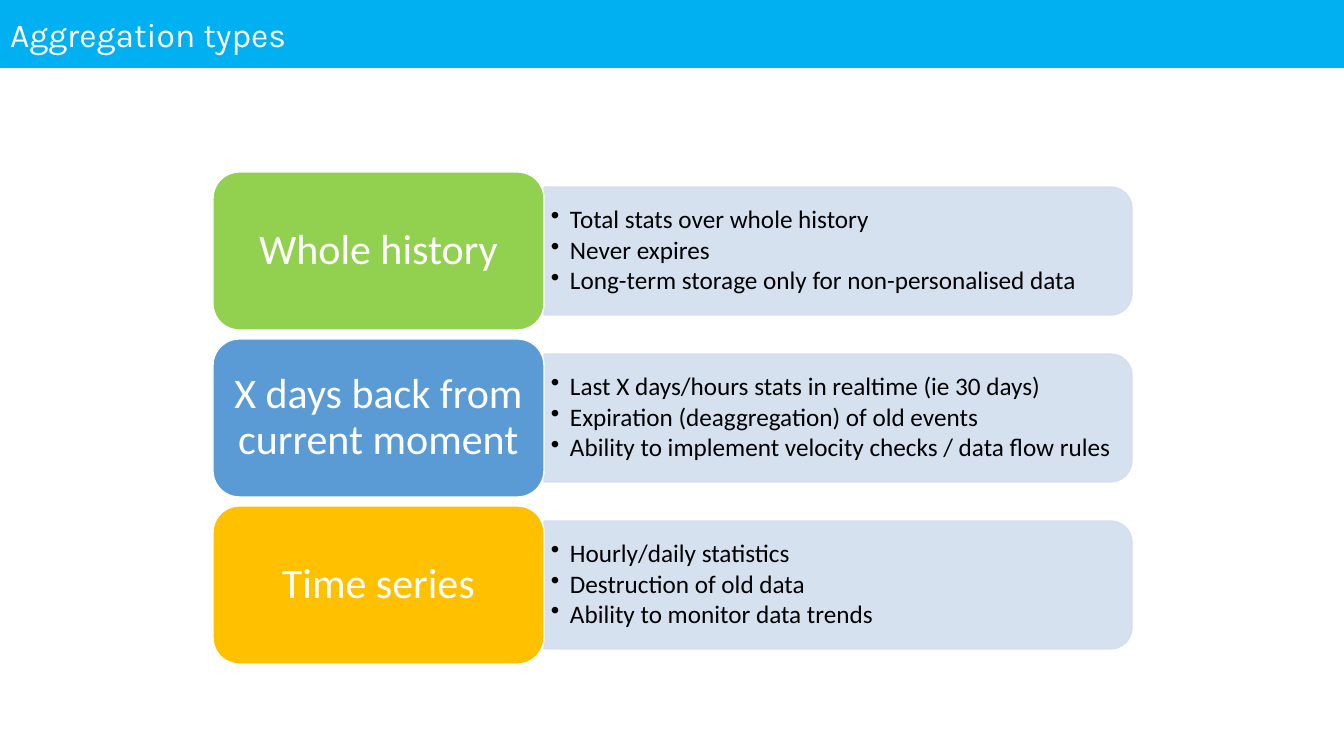
"""Build the slide that compares three aggregation types."""
from lxml.etree import SubElement
from pptx import Presentation
from pptx.dml.color import RGBColor
from pptx.enum.shapes import MSO_SHAPE
from pptx.enum.text import MSO_ANCHOR, PP_ALIGN
from pptx.oxml.ns import qn
from pptx.util import Pt

WHITE = RGBColor(0xFF, 0xFF, 0xFF)
BLACK = RGBColor(0x00, 0x00, 0x00)
CYAN = RGBColor(0x00, 0xB0, 0xF0)
GREEN = RGBColor(0x92, 0xD0, 0x50)
BLUE = RGBColor(0x5B, 0x9B, 0xD5)
AMBER = RGBColor(0xFF, 0xC0, 0x00)
PALE_BLUE = RGBColor(0xD2, 0xDE, 0xEF)

TITLE = "Aggregation types"
AGGREGATIONS = [
    ("Whole history", GREEN, [
        "Total stats over whole history",
        "Never expires",
        "Long-term storage only for non-personalised data",
    ]),
    ("X days back from current moment", BLUE, [
        "Last X days/hours stats in realtime (ie 30 days)",
        "Expiration (deaggregation) of old events",
        "Ability to implement velocity checks / data flow rules",
    ]),
    ("Time series", AMBER, [
        "Hourly/daily statistics",
        "Destruction of old data",
        "Ability to monitor data trends",
    ]),
]

PAGE_WIDTH, PAGE_HEIGHT, TITLE_HEIGHT = 1344, 756, 68
ROW_TOP, ROW_PITCH = 172, 167
CARD_LEFT, CARD_WIDTH, CARD_HEIGHT = 213, 331, 158
PANEL_WIDTH, PANEL_HEIGHT = 588, 128
LIST_WIDTH, LIST_HEIGHT = 582, 115
BULLET_INDENT = 19


def px(length):
    """Turn pixels into EMU."""
    return round(length * 914400 / 100.8)


def add_block(page, preset, left, top, width, height, fill, line=None):
    """Add a filled preset shape without a shadow."""
    block = page.shapes.add_shape(preset, px(left), px(top), px(width), px(height))
    block.shadow.inherit = False
    block.fill.solid()
    block.fill.fore_color.rgb = fill
    if line is None:
        block.line.fill.background()
    else:
        block.line.color.rgb = line
        block.line.width = Pt(1)
    return block


def write(box, lines, font, size, colour, align, margins):
    """Write vertically centred lines and return their paragraphs."""
    frame = box.text_frame
    frame.text = "\n".join(lines)
    frame.word_wrap = True
    frame.vertical_anchor = MSO_ANCHOR.MIDDLE
    frame.margin_left = frame.margin_right = px(margins[0])
    frame.margin_top = frame.margin_bottom = px(margins[1])
    for para in frame.paragraphs:
        para.alignment = align
        for span in para.runs:
            span.font.name = font
            span.font.size = Pt(size)
            span.font.color.rgb = colour
    return frame.paragraphs


def add_bullet(para):
    """Give a paragraph a hanging round bullet."""
    properties = para._p.get_or_add_pPr()
    properties.set("marL", str(px(BULLET_INDENT)))
    properties.set("indent", str(-px(BULLET_INDENT)))
    SubElement(properties, qn("a:buChar"), char="•")


def make_translucent(shape):
    """Set fill and line to 90 percent opacity."""
    for colour in shape._element.spPr.iter(qn("a:srgbClr")):
        SubElement(colour, qn("a:alpha"), val="90000")


def add_aggregation(page, top, name, colour, details):
    """Add one row: a detail panel and its coloured name card."""
    middle = top + CARD_HEIGHT / 2
    panel_left = CARD_LEFT + CARD_WIDTH
    panel = add_block(page, MSO_SHAPE.ROUND_2_SAME_RECTANGLE,
                      panel_left + (PANEL_WIDTH - PANEL_HEIGHT) / 2,
                      middle - PANEL_WIDTH / 2,
                      PANEL_HEIGHT, PANEL_WIDTH, PALE_BLUE, PALE_BLUE)
    panel.rotation = 90
    make_translucent(panel)

    detail_box = page.shapes.add_textbox(
        px(panel_left), px(middle - LIST_HEIGHT / 2), px(LIST_WIDTH), px(LIST_HEIGHT))
    for para in write(detail_box, details, "Calibri", 18, BLACK, PP_ALIGN.LEFT, (7, 4)):
        para.level = 1
        add_bullet(para)
        para.line_spacing = 0.9
        para.space_after = Pt(2.4)

    card = add_block(page, MSO_SHAPE.ROUNDED_RECTANGLE, CARD_LEFT, top,
                     CARD_WIDTH, CARD_HEIGHT, colour, WHITE)
    for para in write(card, [name], "Calibri", 30, WHITE, PP_ALIGN.CENTER, (12, 6)):
        para.line_spacing = 0.9


def main():
    """Build and save the deck."""
    deck = Presentation()
    deck.slide_width, deck.slide_height = px(PAGE_WIDTH), px(PAGE_HEIGHT)
    page = deck.slides.add_slide(deck.slide_layouts[6])
    banner = add_block(page, MSO_SHAPE.RECTANGLE, 0, 0, PAGE_WIDTH, TITLE_HEIGHT, CYAN)
    write(banner, [TITLE], "Karla", 24, WHITE, PP_ALIGN.LEFT, (10, 5))
    for row, (name, colour, details) in enumerate(AGGREGATIONS):
        add_aggregation(page, ROW_TOP + row * ROW_PITCH, name, colour, details)
    deck.save("out.pptx")


if __name__ == "__main__":
    main()
